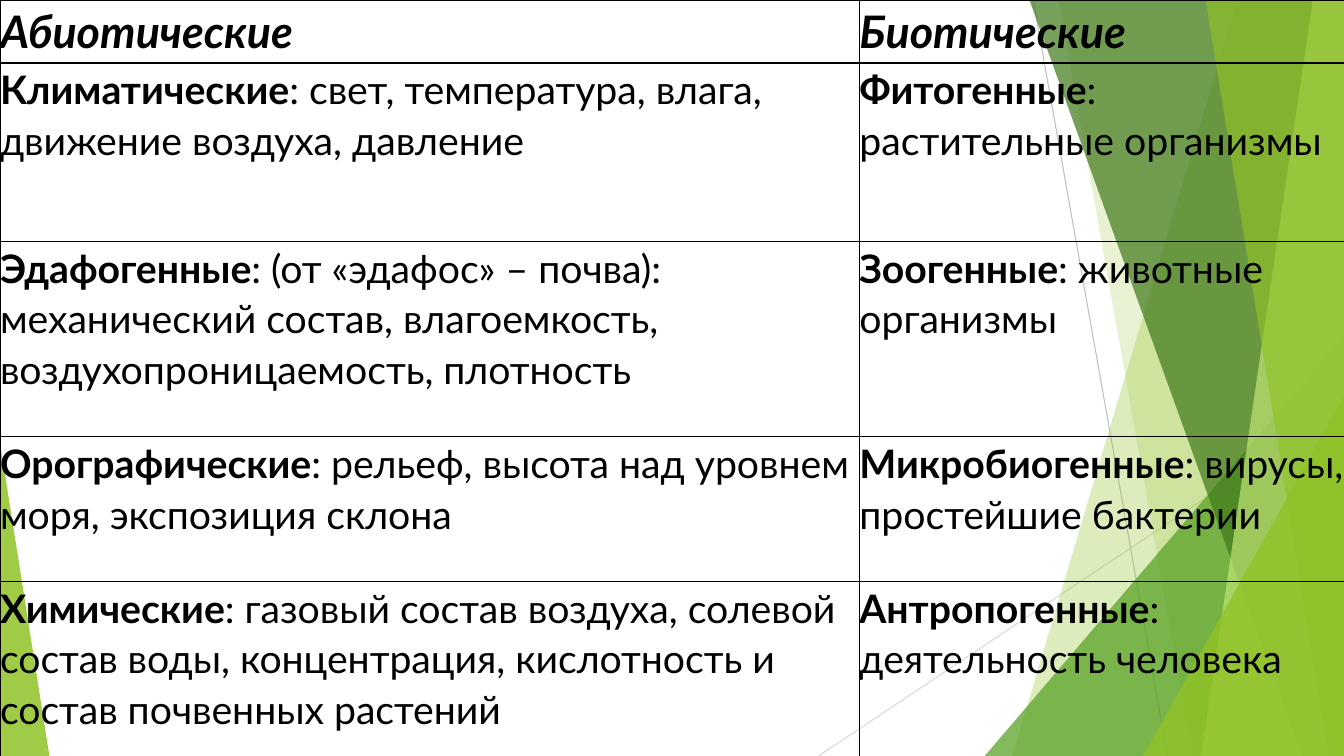
from dataclasses import dataclass

from lxml.etree import SubElement
from pptx import Presentation
from pptx.dml.color import RGBColor
from pptx.enum.shapes import MSO_CONNECTOR as Connector, MSO_SHAPE as Preset
from pptx.oxml import parse_xml
from pptx.oxml.ns import nsdecls, qn
from pptx.util import Pt

WIDTH, HEIGHT = 960, 540
BLEED_TOP = -0.6
FONT = "Lato"
COLORS = {
    "text": "000000",
    "border": "000000",
    "ray": "BFBFBF",
    "pale_ray": "D9D9D9",
    "lime": "90C226",
    "light_lime": "C0E474",
    "green": "54A021",
    "dark_green": "3F7819",
}
COLUMN_WIDTHS = (613.9, 346.3)
ROW_HEIGHTS = (45, 127.5, 139.5, 103.5, 139.5)
HEADINGS = ("Абиотические", "Биотические")
HEADING_FORMAT = {"name": FONT, "size": Pt(32), "bold": True, "italic": True}
GROUP_FORMAT = {"name": FONT, "size": Pt(28), "bold": True, "italic": False}
DETAIL_FORMAT = GROUP_FORMAT | {"bold": False}
FACTORS = (
    (("Климатические", "свет, температура, влага, движение воздуха, давление"),
     ("Фитогенные", "растительные организмы")),
    (("Эдафогенные", "(от «эдафос» – почва): механический состав, влагоемкость, "
                     "воздухопроницаемость, плотность"),
     ("Зоогенные", "животные организмы")),
    (("Орографические", "рельеф, высота над уровнем моря, экспозиция склона"),
     ("Микробиогенные", "вирусы, простейшие бактерии")),
    (("Химические", "газовый состав воздуха, солевой состав воды, концентрация, "
                    "кислотность и состав почвенных растений"),
     ("Антропогенные", "деятельность человека")),
)


@dataclass
class Ray:
    start: tuple[float, float]
    end: tuple[float, float]
    color: str


@dataclass
class Facet:
    top_left: float
    bottom_left: float
    color: str
    opacity: int


@dataclass
class Wedge:
    left: float
    top: float
    width: float
    apex: int
    color: str
    opacity: int


RAYS = (
    Ray((738, 0), (834, HEIGHT), "ray"),
    Ray((WIDTH, 290), (584.6, HEIGHT), "pale_ray"),
)
DECOR = (
    Facet(884.2, 722.9, "lime", 30),
    Facet(756, 851.8, "lime", 20),
    Wedge(703.4, 239.8, 256.6, 1, "green", 72),
    Facet(735.1, 929.5, "dark_green", 70),
    Facet(938.2, 858.2, "light_lime", 70),
    Facet(861.1, 949, "lime", 65),
    Wedge(816.5, 283, 143.5, 1, "lime", 80),
    Wedge(0, 316.1, 35.3, 0, "lime", 85),
)


def rgb(color: str) -> RGBColor:
    return RGBColor.from_string(COLORS[color])


def draw_ray(shapes, ray: Ray) -> None:
    line = shapes.add_connector(
        Connector.STRAIGHT, *(Pt(value) for value in ray.start + ray.end))
    line.line.color.rgb = rgb(ray.color)
    line.line.width = Pt(0.75)
    SubElement(line._element.spPr, qn("a:effectLst"))


def draw_decor(shapes, part: Facet | Wedge) -> None:
    if isinstance(part, Facet):
        outline = shapes.build_freeform(part.top_left, BLEED_TOP, scale=Pt(1))
        outline.add_line_segments(
            [(WIDTH, BLEED_TOP), (WIDTH, HEIGHT), (part.bottom_left, HEIGHT)])
        figure = outline.convert_to_shape()
    else:
        figure = shapes.add_shape(
            Preset.ISOSCELES_TRIANGLE, Pt(part.left), Pt(part.top),
            Pt(part.width), Pt(HEIGHT - part.top))
        figure.adjustments[0] = part.apex
    figure.shadow.inherit = False
    figure.fill.solid()
    figure.fill.fore_color.rgb = rgb(part.color)
    tint = figure._element.spPr.find(".//" + qn("a:srgbClr"))
    SubElement(tint, qn("a:alpha"), val=str(part.opacity * 1000))
    figure.line.fill.background()


def write_cell(cell, runs: list[tuple[str, dict]]) -> None:
    for side in ("left", "right", "top", "bottom"):
        setattr(cell, f"margin_{side}", 0)
    cell.fill.background()
    properties = cell._tc.get_or_add_tcPr()
    for position, side in enumerate("LRTB"):
        properties.insert(position, parse_xml(
            f'<a:ln{side} {nsdecls("a")} w="{Pt(1)}"><a:solidFill>'
            f'<a:srgbClr val="{COLORS["border"]}"/></a:solidFill></a:ln{side}>'))
    paragraph = cell.text_frame.paragraphs[0]
    paragraph.line_spacing = 1.07
    paragraph.space_after = Pt(8)
    for text, text_format in runs:
        run = paragraph.add_run()
        run.text = text
        run.font.color.rgb = rgb("text")
        for attribute, value in text_format.items():
            setattr(run.font, attribute, value)


def draw_factors(shapes) -> None:
    factors = shapes.add_table(
        len(ROW_HEIGHTS), len(COLUMN_WIDTHS), 0, 0,
        Pt(sum(COLUMN_WIDTHS)), Pt(sum(ROW_HEIGHTS))).table
    factors.horz_banding = False
    for column, width in zip(factors.columns, COLUMN_WIDTHS):
        column.width = Pt(width)
    for row, height in zip(factors.rows, ROW_HEIGHTS):
        row.height = Pt(height)
    for column, heading in enumerate(HEADINGS):
        write_cell(factors.cell(0, column), [(heading, HEADING_FORMAT)])
    for row, pair in enumerate(FACTORS, 1):
        for column, (group, detail) in enumerate(pair):
            write_cell(factors.cell(row, column),
                       [(group, GROUP_FORMAT), (f": {detail}", DETAIL_FORMAT)])


def main() -> None:
    deck = Presentation()
    deck.slide_width, deck.slide_height = Pt(WIDTH), Pt(HEIGHT)
    shapes = deck.slides.add_slide(deck.slide_layouts[6]).shapes
    for ray in RAYS:
        draw_ray(shapes, ray)
    for part in DECOR:
        draw_decor(shapes, part)
    draw_factors(shapes)
    deck.save("out.pptx")


if __name__ == "__main__":
    main()
